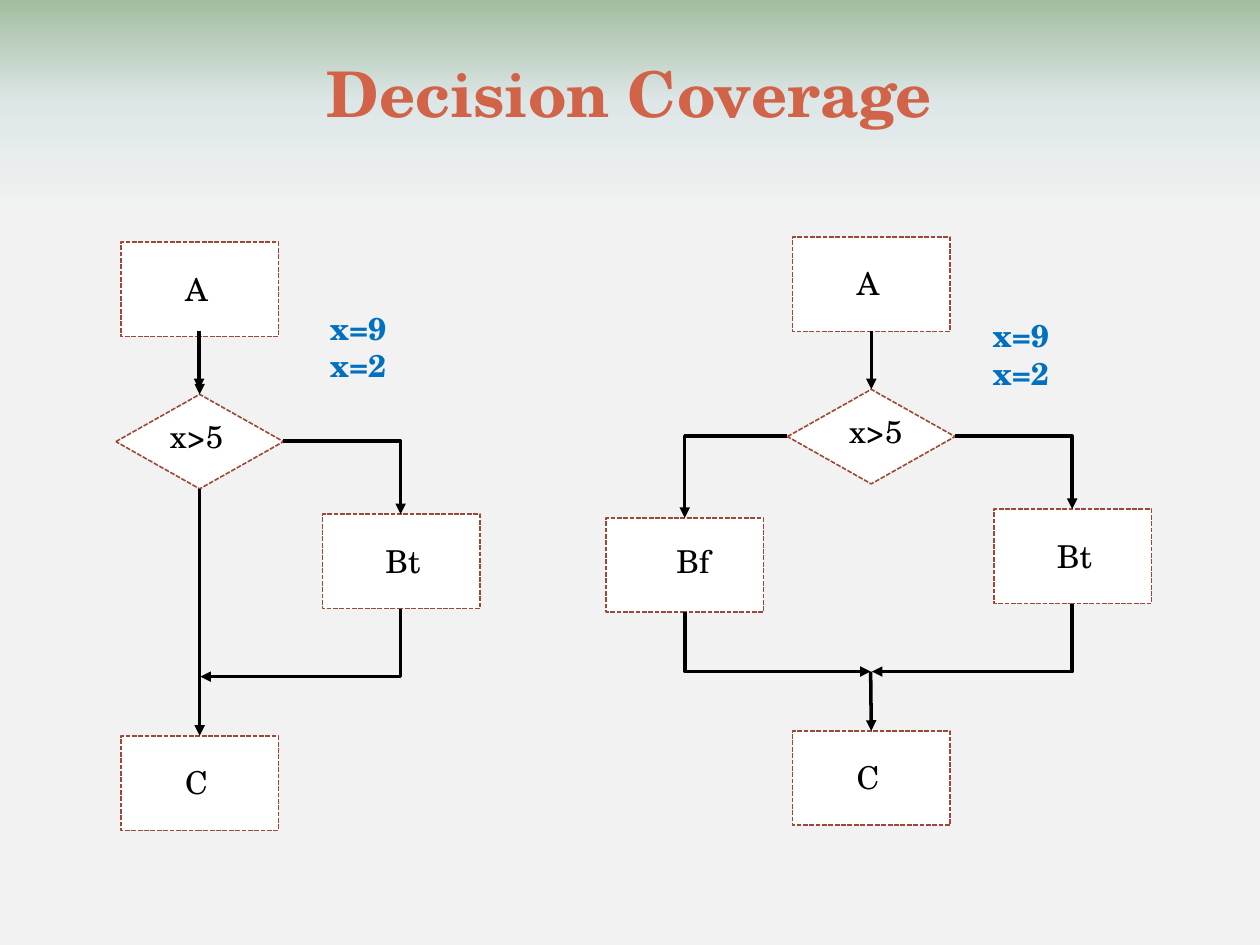
"""Build the Decision Coverage slide with two flow charts."""
from copy import deepcopy
from typing import NamedTuple, Optional

from pptx import Presentation
from pptx.dml.color import RGBColor
from pptx.enum.dml import MSO_LINE
from pptx.enum.shapes import MSO_CONNECTOR, MSO_SHAPE
from pptx.enum.text import MSO_ANCHOR, MSO_AUTO_SIZE, PP_ALIGN
from pptx.oxml.ns import qn
from pptx.oxml.xmlchemy import OxmlElement
from pptx.shapes.autoshape import Shape
from pptx.shapes.connector import Connector
from pptx.slide import Slide
from pptx.util import Inches, Pt

RECTANGLE, DECISION = MSO_SHAPE.RECTANGLE, MSO_SHAPE.FLOWCHART_DECISION
STRAIGHT, ELBOW = MSO_CONNECTOR.STRAIGHT, MSO_CONNECTOR.ELBOW
DASH = MSO_LINE.SQUARE_DOT
BOTTOM, CENTER, LEFT = MSO_ANCHOR.BOTTOM, PP_ALIGN.CENTER, PP_ALIGN.LEFT
TOP, GROW, FIXED = MSO_ANCHOR.TOP, MSO_AUTO_SIZE.SHAPE_TO_FIT_TEXT, MSO_AUTO_SIZE.NONE
TOP_SITE, BOTTOM_SITE = 0, 2
FONT = "TeX Gyre Schola"
COLORS = {
    "title": "D16349", "text": "000000", "values": "0070C0",
    "node": "FFFFFF", "border": "9B4936", "arrow": "000000",
}
BACKGROUND_STOPS = [(0.77, "F2F2F2"), (0.89, "DEE7E8"), (1.0, "A2BDA0")]
NODE_HEIGHT = 0.75


class Point(NamedTuple):
    x: float
    y: float


class Node(NamedTuple):
    label: str
    left: float
    top: float
    label_left: float
    label_top: float
    label_width: float
    kind: MSO_SHAPE = RECTANGLE
    width: float = 1.25


class Flow(NamedTuple):
    dx: float
    dy: float
    decision_label_left: float
    values_at: Point
    false_node: Optional[Node] = None


FLOWS = [
    Flow(0, 0, 1.25, Point(2.52, 2.4)),
    Flow(5.33, -0.04, 6.64, Point(7.78, 2.46), Node("Bf", 4.81, 4.11, 5.27, 4.25, 0.5)),
]


def color(name: str) -> RGBColor:
    """Look up a named colour."""
    return RGBColor.from_string(COLORS[name])


def paint_background(page: Slide) -> None:
    """Fill the page with the vertical three-stop gradient."""
    fill = page.background.fill
    fill.gradient()
    fill.gradient_angle = 90
    first = next(page.background._cSld.iter(qn("a:gs")))
    first.getparent().append(deepcopy(first))
    for stop, (position, value) in zip(fill.gradient_stops, BACKGROUND_STOPS):
        stop.position = position
        stop.color.rgb = RGBColor.from_string(value)


def add_text(page: Slide, lines: list[str], at: Point, width: float, height: float,
             shade: str = "text", size: int = 18, bold: bool = False,
             align: PP_ALIGN = LEFT, anchor: MSO_ANCHOR = TOP,
             fit: MSO_AUTO_SIZE = GROW) -> None:
    """Place one text box with a paragraph for each line."""
    box = page.shapes.add_textbox(Inches(at.x), Inches(at.y), Inches(width), Inches(height))
    frame = box.text_frame
    frame.word_wrap = True
    frame.auto_size = fit
    frame.vertical_anchor = anchor
    frame.text = "\n".join(lines)
    for para in frame.paragraphs:
        para.alignment = align
        para.font.name = FONT
        para.font.size = Pt(size)
        para.font.bold = bold
        para.font.color.rgb = color(shade)


def add_node(page: Slide, node: Node) -> Shape:
    """Draw a dashed node and its label."""
    shape = page.shapes.add_shape(node.kind, Inches(node.left), Inches(node.top),
                                  Inches(node.width), Inches(NODE_HEIGHT))
    shape.shadow.inherit = False
    shape.fill.solid()
    shape.fill.fore_color.rgb = color("node")
    shape.line.color.rgb = color("border")
    shape.line.width = Pt(0.9)
    shape.line.dash_style = DASH
    add_text(page, [node.label], Point(node.label_left, node.label_top), node.label_width, 0.4)
    return shape


def add_arrow(page: Slide, start: Point, end: Point, kind: MSO_CONNECTOR = STRAIGHT) -> Connector:
    """Draw a black connector with an arrowhead at its end."""
    arrow = page.shapes.add_connector(kind, Inches(start.x), Inches(start.y),
                                      Inches(end.x), Inches(end.y))
    arrow.line.color.rgb = color("arrow")
    arrow.line.width = Pt(2)
    head = OxmlElement("a:tailEnd")
    head.set("type", "triangle")
    arrow.line._get_or_add_ln().append(head)
    arrow._element.spPr.append(OxmlElement("a:effectLst"))
    return arrow


def add_bend(page: Slide, start: Point, end: Point, down_first: bool = False) -> None:
    """Draw a one-corner arrow, turned a quarter when it leaves downwards."""
    if down_first:
        middle = Point((start.x + end.x) / 2, (start.y + end.y) / 2)
        across, down = (end.x - start.x) / 2, (end.y - start.y) / 2
        start = Point(middle.x - down, middle.y + across)
        end = Point(middle.x + down, middle.y - across)
    properties = add_arrow(page, start, end, ELBOW)._element.spPr
    properties.find(qn("a:prstGeom")).set("prst", "bentConnector2")
    if down_first:
        properties.find(qn("a:xfrm")).set("rot", "5400000")


def join(page: Slide, upper: Shape, lower: Shape) -> None:
    """Link two nodes from bottom to top."""
    arrow = add_arrow(page, Point(0, 0), Point(1, 1))
    arrow.begin_connect(upper, BOTTOM_SITE)
    arrow.end_connect(lower, TOP_SITE)


def add_flow(page: Slide, flow: Flow) -> None:
    """Draw one flow chart, with a false branch if it has one."""
    dx, dy = flow.dx, flow.dy
    middle, branch, merge_y = 1.58 + dx, 3.18 + dx, 5.37 + dy
    decision_y = 3.5 + dy
    start = add_node(page, Node("A", 0.96 + dx, 1.92 + dy, 1.37 + dx, 2.09 + dy, 0.42))
    decision = add_node(page, Node("x>5", 0.92 + dx, 3.13 + dy, flow.decision_label_left,
                                   3.26 + dy, 0.72, DECISION, 1.33))
    add_node(page, Node("Bt", 2.56 + dx, 4.08 + dy, 2.96 + dx, 4.25 + dy, 0.52))
    finish = add_node(page, Node("C", 0.96 + dx, 5.84 + dy, 1.37 + dx, 6.01 + dy, 0.42))
    join(page, start, decision)
    add_bend(page, Point(2.25 + dx, decision_y), Point(branch, 4.08 + dy))
    add_bend(page, Point(branch, 4.83 + dy), Point(middle + 0.01, merge_y), True)
    if flow.false_node:
        node = flow.false_node
        add_node(page, node)
        center = node.left + node.width / 2
        add_bend(page, Point(0.92 + dx, decision_y), Point(center, node.top))
        add_bend(page, Point(center, node.top + NODE_HEIGHT), Point(middle, merge_y), True)
        arrow = add_arrow(page, Point(middle, merge_y), Point(middle, 5.84 + dy))
        arrow.end_connect(finish, TOP_SITE)
    else:
        join(page, decision, finish)
        add_arrow(page, Point(middle, 2.63), Point(middle, 3.09))
    add_text(page, ["x=9", "x=2"], flow.values_at, 0.72, 0.71, "values", bold=True)


def main() -> None:
    """Build and save the deck."""
    deck = Presentation()
    deck.slide_width, deck.slide_height = Inches(10), Inches(7.5)
    page = deck.slides.add_slide(deck.slide_layouts[6])
    paint_background(page)
    add_text(page, ["Decision Coverage"], Point(0.33, 0.25), 9.33, 0.83, "title", 36, True,
             CENTER, BOTTOM, FIXED)
    for flow in FLOWS:
        add_flow(page, flow)
    deck.save("out.pptx")


if __name__ == "__main__":
    main()
